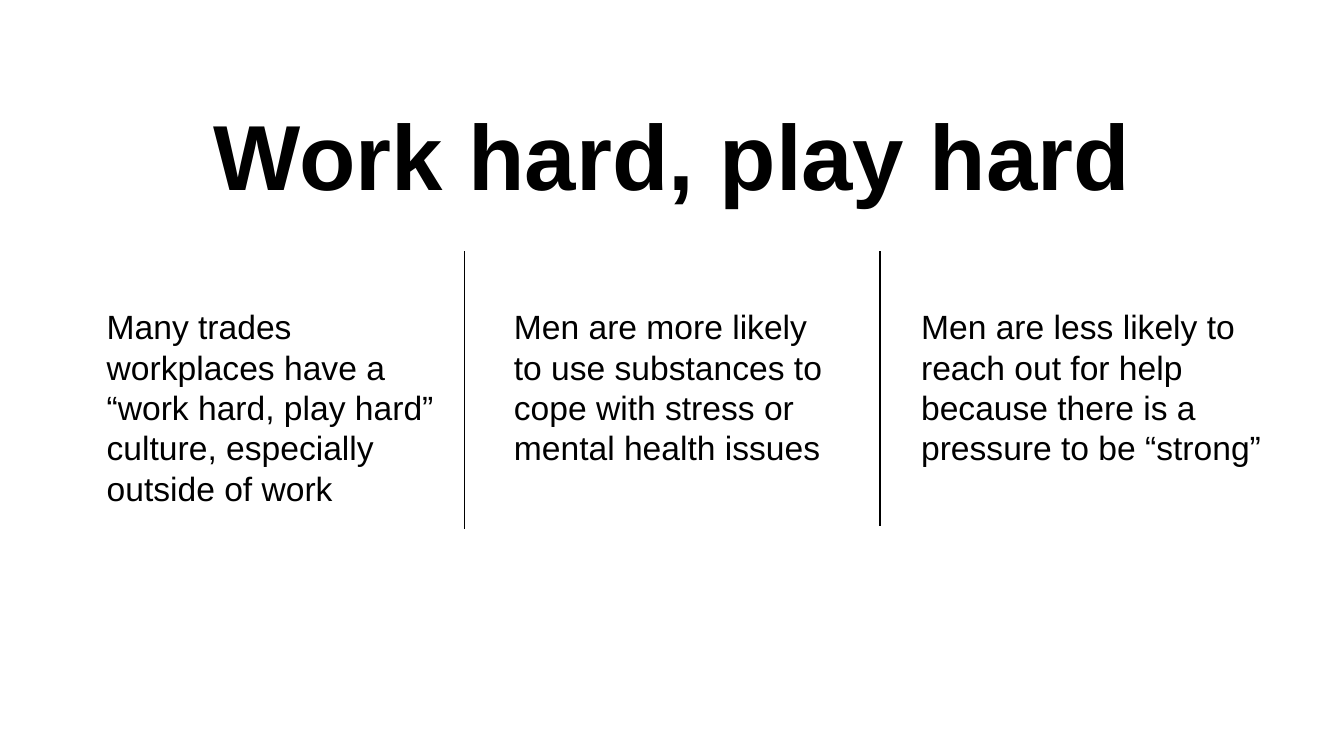
from pptx import Presentation
from pptx.dml.color import RGBColor
from pptx.enum.text import MSO_ANCHOR, PP_ALIGN
from pptx.oxml.ns import qn
from pptx.util import Pt
from lxml.etree import SubElement

COLORS = {"text": "000000", "rule": "000000"}
FONT = "Arial"

COLUMN_TOP = 215.3
COLUMNS = [
    (69.1, 262.8, 152.6, "Many trades workplaces have a “work hard, play hard” \nculture, especially \noutside of work"),
    (360, 239.8, 123.8, "Men are more likely to use substances to cope with stress or mental health issues"),
    (650.9, 259.2, 123.8, "Men are less likely to reach out for help because there is a pressure to be “strong”"),
]
RULE_TOP = 179.3
RULES = [(331.9, 198.7), (628.6, 196.6)]


def format_runs(p, size, bold=False):
    for r in p.runs:
        r.font.name = FONT
        r.font.size = Pt(size)
        r.font.bold = bold
        r.font.color.rgb = RGBColor.from_string(COLORS["text"])


def add_title(s, left, top, width, height):
    sp = s.shapes.title
    sp.left, sp.top, sp.width, sp.height = Pt(left), Pt(top), Pt(width), Pt(height)
    tf = sp.text_frame
    tf.text = "Work hard, play hard"
    tf.vertical_anchor = MSO_ANCHOR.MIDDLE
    p = tf.paragraphs[0]
    p.alignment = PP_ALIGN.CENTER
    format_runs(p, 66, bold=True)


def add_column(s, left, top, width, height, text):
    tf = s.shapes.add_textbox(Pt(left), Pt(top), Pt(width), Pt(height)).text_frame
    tf.word_wrap = True
    p = tf.paragraphs[0]
    p.text = text
    p.line_spacing = Pt(28.8)
    format_runs(p, 24)


def add_rule(s, left, top, height):
    line = s.shapes.add_connector(1, Pt(left), Pt(top), Pt(left), Pt(top + height))
    line.line.color.rgb = RGBColor.from_string(COLORS["rule"])
    line.line.width = Pt(1)
    SubElement(line._element.spPr, qn("a:effectLst"))


def main():
    prs = Presentation()
    prs.slide_width, prs.slide_height = Pt(960), Pt(540)
    s = prs.slides.add_slide(prs.slide_layouts[5])
    add_title(s, 61.2, 59.8, 838.1, 99.4)
    for left, width, height, text in COLUMNS:
        add_column(s, left, COLUMN_TOP, width, height, text)
    for left, height in RULES:
        add_rule(s, left, RULE_TOP, height)
    prs.save("out.pptx")


if __name__ == "__main__":
    main()
